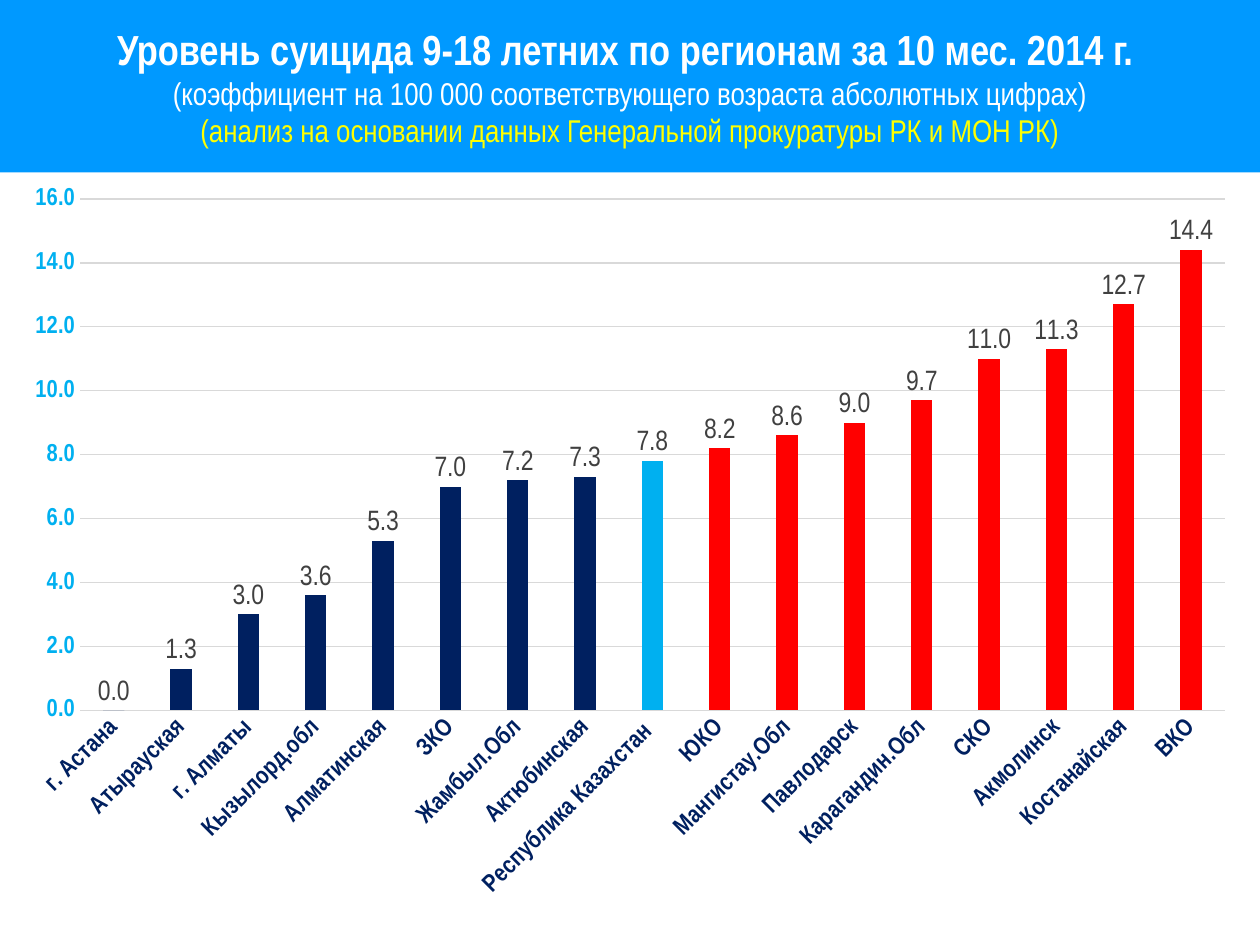
import pptx
import pptx.chart.data
import pptx.dml.color
import pptx.enum.chart
import pptx.enum.text
import pptx.util

Pt = pptx.util.Pt
FONT = "Arial Narrow"
COLORS = {
    "band": "0099FF",
    "white": "FFFFFF",
    "yellow": "FFFF00",
    "below": "002060",
    "average": "00B0F0",
    "above": "FF0000",
    "label": "404040",
    "grid": "D9D9D9",
}
TITLE_LINES = [
    ("Уровень суицида 9-18 летних по регионам за 10 мес. 2014 г. ", 24, True, "white"),
    ("(коэффициент на 100 000 соответствующего возраста абсолютных цифрах)", 18, False, "white"),
    ("(анализ на основании данных Генеральной прокуратуры РК и МОН РК)", 18, False, "yellow"),
]
COUNTRY = "Республика Казахстан "
RATES = {
    "г. Астана": 0,
    "Атырауская": 1.3,
    "г. Алматы": 3,
    "Кызылорд.обл": 3.6,
    "Алматинская": 5.3,
    "ЗКО": 7,
    "Жамбыл.Обл": 7.2,
    "Актюбинская": 7.3,
    COUNTRY: 7.8,
    "ЮКО": 8.2,
    "Мангистау.Обл": 8.6,
    "Павлодарск": 9,
    "Карагандин.Обл": 9.7,
    "СКО": 11,
    "Акмолинск": 11.3,
    "Костанайская": 12.7,
    "ВКО": 14.4,
}


def rgb(name):
    return pptx.dml.color.RGBColor.from_string(COLORS[name])


def set_font(font, size, color, bold=False):
    font.name = FONT
    font.size = Pt(size)
    font.bold = bold
    font.color.rgb = rgb(color)


def set_fill(fill, color):
    fill.solid()
    fill.fore_color.rgb = rgb(color)


def set_line(line, color):
    line.color.rgb = rgb(color)
    line.width = Pt(0.75)


def add_title_band(slide, left, top, width, height):
    title = slide.shapes.title
    title.left, title.top, title.width, title.height = map(Pt, (left, top, width, height))
    set_fill(title.fill, "band")
    frame = title.text_frame
    frame.word_wrap = False
    frame.auto_size = pptx.enum.text.MSO_AUTO_SIZE.NONE
    frame.vertical_anchor = pptx.enum.text.MSO_ANCHOR.MIDDLE
    frame.text = "\n".join(line[0] for line in TITLE_LINES)
    for paragraph, (_, size, bold, color) in zip(frame.paragraphs, TITLE_LINES):
        paragraph.alignment = pptx.enum.text.PP_ALIGN.CENTER
        paragraph.space_before = Pt(0)
        set_font(paragraph.font, size, color, bold)


def format_axes(chart):
    for axis, color in ((chart.category_axis, "below"), (chart.value_axis, "average")):
        axis.major_tick_mark = pptx.enum.chart.XL_TICK_MARK.NONE
        axis.minor_tick_mark = pptx.enum.chart.XL_TICK_MARK.NONE
        set_font(axis.tick_labels.font, 14, color, True)
    set_line(chart.category_axis.format.line, "grid")
    text_body = chart.category_axis._element.find(pptx.oxml.ns.qn("c:txPr"))
    text_body.find(pptx.oxml.ns.qn("a:bodyPr")).set("rot", "-2700000")
    axis = chart.value_axis
    axis.minimum_scale, axis.maximum_scale, axis.major_unit = 0, 16, 2
    axis.tick_labels.number_format = "0.0"
    axis.tick_labels.number_format_is_linked = False
    axis.format.line.fill.background()
    set_line(axis.major_gridlines.format.line, "grid")


def format_columns(plot):
    plot.gap_width = 219
    plot.overlap = -27
    plot.vary_by_categories = False
    series = plot.series[0]
    series.invert_if_negative = False
    set_fill(series.format.fill, "below")
    for index, (region, rate) in enumerate(RATES.items()):
        if rate >= RATES[COUNTRY]:
            color = "average" if region == COUNTRY else "above"
            set_fill(series.points[index].format.fill, color)
    labels = series.data_labels
    labels.show_value = True
    labels.position = pptx.enum.chart.XL_LABEL_POSITION.OUTSIDE_END
    labels.number_format = "0.0"
    labels.number_format_is_linked = False
    set_font(labels.font, 16, "label")


def add_rate_chart(slide, left, top, width, height):
    data = pptx.chart.data.CategoryChartData(number_format="0.0")
    data.categories = list(RATES)
    data.add_series("Series 1", list(RATES.values()))
    chart = slide.shapes.add_chart(
        pptx.enum.chart.XL_CHART_TYPE.COLUMN_CLUSTERED,
        Pt(left), Pt(top), Pt(width), Pt(height), data,
    ).chart
    chart.has_title = False
    chart.has_legend = False
    chart.font.name = FONT
    chart.font.size = Pt(10)
    format_axes(chart)
    format_columns(chart.plots[0])


def main():
    presentation = pptx.Presentation()
    presentation.slide_width = Pt(720)
    presentation.slide_height = Pt(540)
    slide = presentation.slides.add_slide(presentation.slide_layouts[5])
    add_title_band(slide, 0, 0, 720, 98.5)
    add_rate_chart(slide, 6, 98.5, 708, 422.5)
    presentation.save("out.pptx")


if __name__ == "__main__":
    main()
